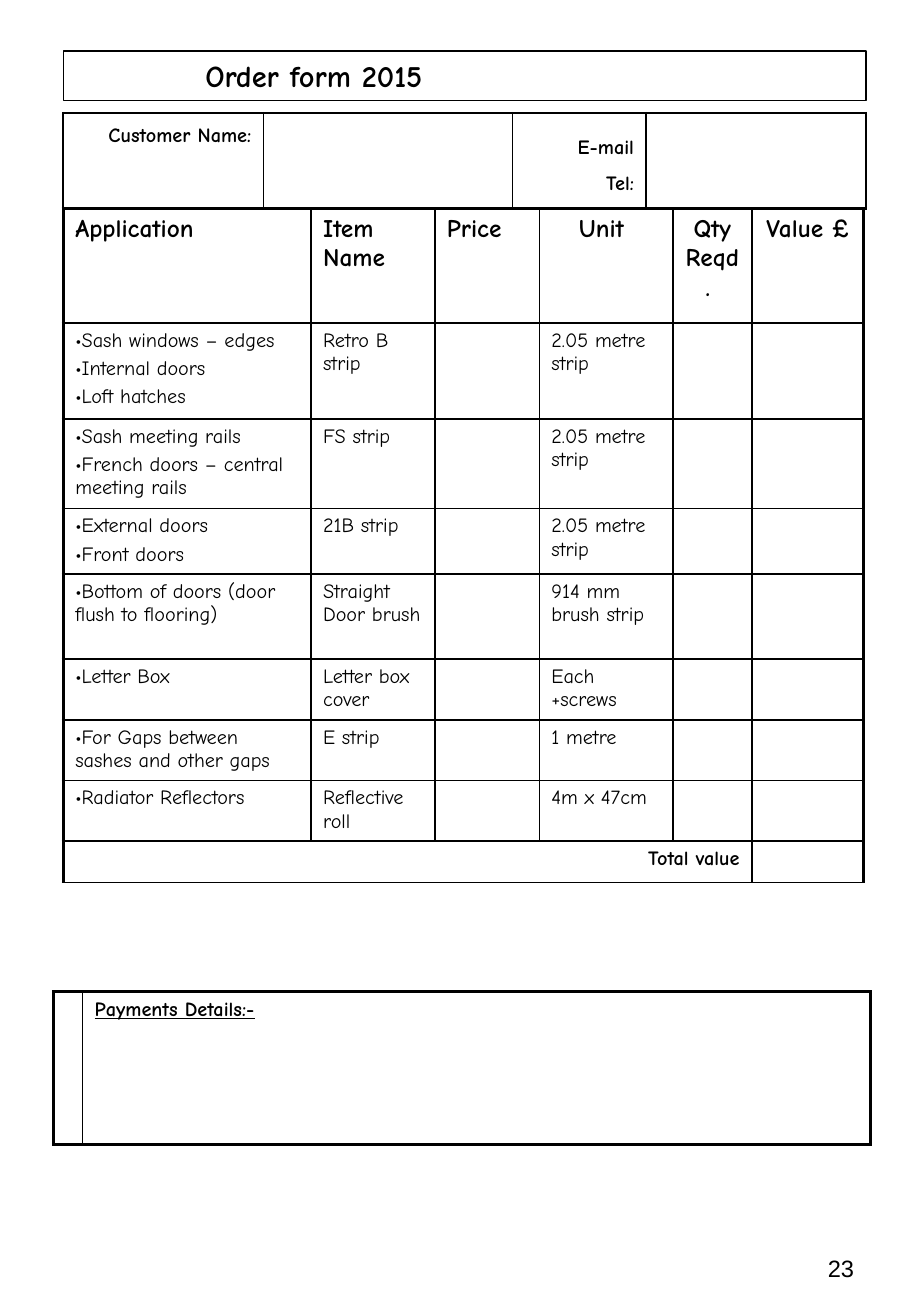
from pptx import Presentation
from pptx.dml.color import RGBColor
from pptx.enum.text import MSO_ANCHOR, MSO_AUTO_SIZE, PP_ALIGN
from pptx.oxml.ns import qn
from pptx.util import Inches, Pt
from lxml import etree

LEFT, CENTER, RIGHT = PP_ALIGN.LEFT, PP_ALIGN.CENTER, PP_ALIGN.RIGHT
MIDDLE, BOTTOM = MSO_ANCHOR.MIDDLE, MSO_ANCHOR.BOTTOM
COLOURS = {"ink": "000000"}
INK = RGBColor.from_string(COLOURS["ink"])
NO_STYLE_NO_GRID = "{2D5ABB26-0587-4C30-8999-92F81FD0307C}"

BODY = {"name": "Comic Neue", "size": Pt(12), "bold": False}
LABEL = {**BODY, "bold": True}
HEADING = {**LABEL, "size": Pt(15)}
TITLE = {**LABEL, "size": Pt(18)}
PAGE = {"name": "Arial", "size": Pt(14)}


def write(text_frame, lines, font_format, align=LEFT, before=0, bullet=None):
    """Fill a text frame with one paragraph per line, all formatted alike."""
    for index, line in enumerate(lines):
        paragraph = text_frame.paragraphs[0] if index == 0 else text_frame.add_paragraph()
        paragraph.alignment = align
        paragraph.space_before = Pt(before)
        run = paragraph.add_run()
        run.text = line
        run.font.color.rgb = INK
        for name, value in font_format.items():
            setattr(run.font, name, value)
        if bullet:
            properties = paragraph._p.get_or_add_pPr()
            properties.set("marL", "0")
            properties.set("indent", "0")
            colour = etree.SubElement(properties, qn("a:buClr"))
            etree.SubElement(colour, qn("a:srgbClr")).set("val", COLOURS["ink"])
            etree.SubElement(properties, qn("a:buFont")).set("typeface", font_format["name"])
            etree.SubElement(properties, qn("a:buChar")).set("char", bullet)


def add_ruled_table(shapes, left, top, widths, heights, outer, inner_vertical, inner_horizontal):
    """Add an unstyled table; outer holds left, top, right, bottom widths in points."""
    frame = shapes.add_table(len(heights), len(widths), Inches(left), Inches(top),
                             Inches(sum(widths)), Inches(sum(heights)))
    table = frame.table
    table.first_row = table.horz_banding = False
    table._tbl.tblPr.find(qn("a:tableStyleId")).text = NO_STYLE_NO_GRID
    for column, width in zip(table.columns, widths):
        column.width = Inches(width)
    for row, height in zip(table.rows, heights):
        row.height = Inches(height)
    for row_index, row in enumerate(table.rows):
        for column_index, cell in enumerate(row.cells):
            borders = {
                "a:lnL": outer[0] if column_index == 0 else inner_vertical,
                "a:lnR": outer[2] if column_index == len(widths) - 1 else inner_vertical,
                "a:lnT": outer[1] if row_index == 0 else inner_horizontal,
                "a:lnB": outer[3] if row_index == len(heights) - 1 else inner_horizontal,
            }
            properties = cell._tc.get_or_add_tcPr()
            for tag, width in borders.items():
                line = etree.SubElement(properties, qn(tag))
                line.set("w", str(Pt(width)))
                if width:
                    fill = etree.SubElement(line, qn("a:solidFill"))
                    etree.SubElement(fill, qn("a:srgbClr")).set("val", COLOURS["ink"])
                else:
                    etree.SubElement(line, qn("a:noFill"))
            cell.fill.background()
            # Keeps empty cells from stretching the short rows
            cell.text_frame.paragraphs[0]._p.get_or_add_endParaRPr().set("sz", "1200")
    return table


presentation = Presentation()
presentation.slide_width = Inches(7.5)
presentation.slide_height = Inches(10.84)
slide = presentation.slides.add_slide(presentation.slide_layouts[5])
shapes = slide.shapes

# Title box
title = shapes.title
title.left, title.top, title.width, title.height = map(Inches, (0.52, 0.42, 6.61, 0.41))
title.line.color.rgb = INK
title.line.width = Pt(0.75)
title_format = {"auto_size": MSO_AUTO_SIZE.NONE, "vertical_anchor": MIDDLE,
                "margin_left": Inches(1.17)}
for name, value in title_format.items():
    setattr(title.text_frame, name, value)
write(title.text_frame, ["Order form 2015"], TITLE)

# Customer contact details
contact_table = add_ruled_table(shapes, 0.52, 0.93, [1.65, 2.05, 1.1, 1.81], [0.43, 0.36],
                                (1.5, 1.5, 1.5, 1.5), 1, 0)
contact_labels = [(0, 0, "Customer Name:", MIDDLE), (0, 2, "E-mail", BOTTOM),
                  (1, 2, "Tel:", MIDDLE)]
for row, column, label, anchor in contact_labels:
    cell = contact_table.cell(row, column)
    cell.vertical_anchor = anchor
    cell.margin_top = 0
    write(cell.text_frame, [label], LABEL, RIGHT)
    cell.text_frame.paragraphs[0].line_spacing = 0.95

# Payment details
payment_table = add_ruled_table(shapes, 0.44, 8.17, [0.23, 6.49], [1.26],
                                (2.25, 2.25, 2.25, 2.25), 1, 1)
write(payment_table.cell(0, 1).text_frame, ["Payments Details:-"],
      {**LABEL, "underline": True}, before=3)

# Order lines
headings = [("Application", LEFT), ("Item Name", LEFT), ("Price", LEFT),
            ("Unit ", CENTER), ("Qty Reqd. ", CENTER), ("Value £ ", CENTER)]
products = [
    (["Sash windows – edges", "Internal doors", "Loft hatches"],
     "Retro B strip", "2.05 metre strip"),
    (["Sash meeting rails", "French doors – central meeting rails"],
     "FS strip", "2.05 metre strip"),
    (["External doors", "Front doors"], "21B strip", "2.05 metre strip"),
    (["Bottom of doors (door flush to flooring)"],
     "Straight Door brush", "914 mm brush strip"),
    (["Letter Box"], "Letter box cover", "Each +screws"),
    (["For Gaps between sashes and other gaps"], "E strip", "1 metre"),
    (["Radiator Reflectors"], "Reflective roll", "4m x 47cm"),
]
order_table = add_ruled_table(shapes, 0.52, 1.72, [2.04, 1.02, 0.86, 1.1, 0.65, 0.92],
                              [0.94, 0.79, 0.74, 0.54, 0.7, 0.5, 0.5, 0.5, 0.34],
                              (2.25, 2.25, 2.25, 1), 1, 1)
for column, (heading, align) in enumerate(headings):
    write(order_table.cell(0, column).text_frame, [heading], HEADING, align, 8)
for row, (applications, item, unit) in enumerate(products, start=1):
    write(order_table.cell(row, 0).text_frame, applications, BODY, before=3, bullet="•")
    write(order_table.cell(row, 1).text_frame, [item], BODY, before=8)
    write(order_table.cell(row, 3).text_frame, [unit], BODY, before=8)
total_row = len(products) + 1
total_cell = order_table.cell(total_row, 0)
total_cell.merge(order_table.cell(total_row, 4))
write(total_cell.text_frame, ["Total value"], LABEL, RIGHT, 8)

# Page number
page_number = shapes.add_textbox(Inches(6.59), Inches(10.28), Inches(0.54), Inches(0.36))
page_number.text_frame.word_wrap = True
write(page_number.text_frame, ["23"], PAGE, RIGHT)

presentation.save("out.pptx")
